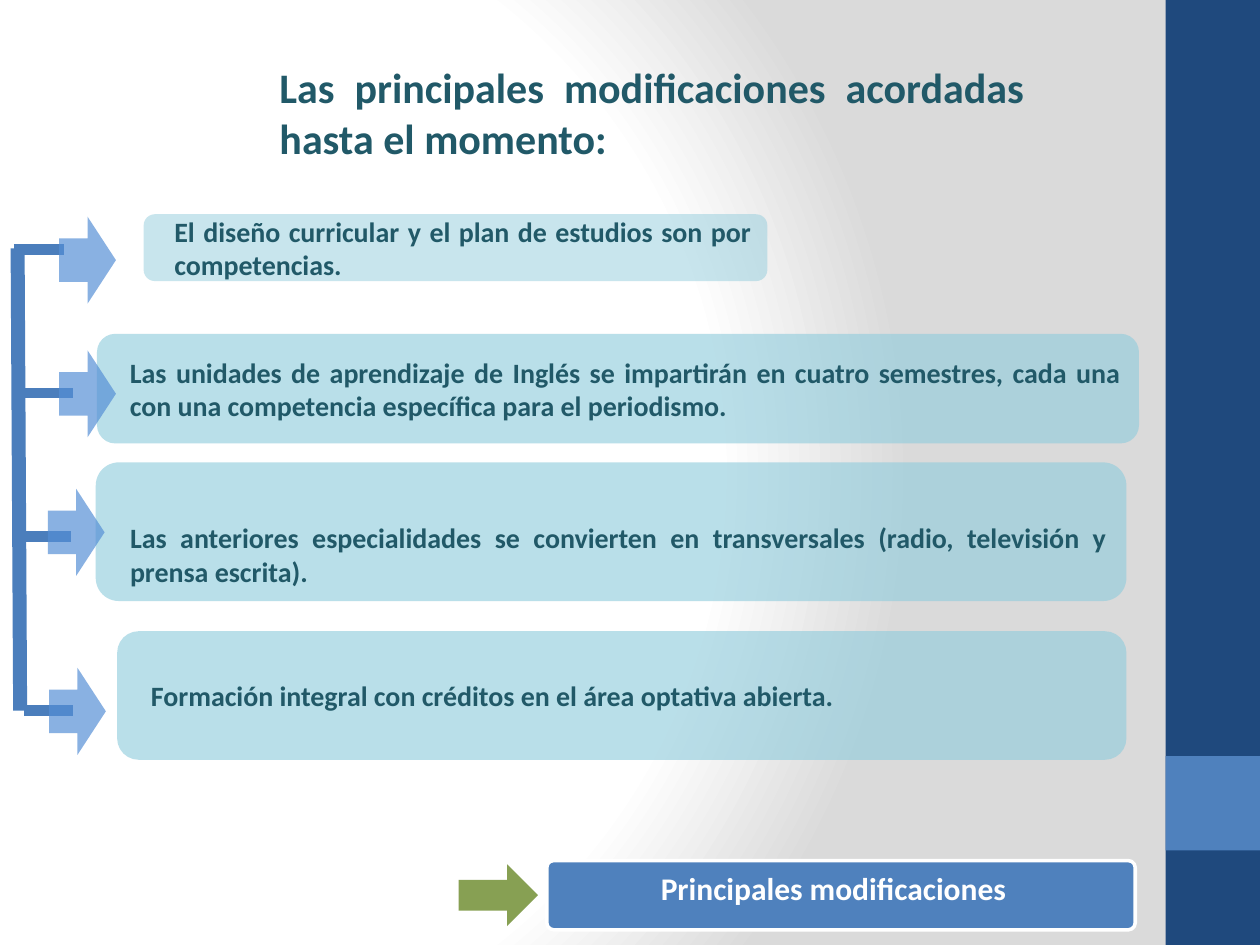
import pptx
import pptx.util
import pptx.dml.color
import pptx.enum.shapes
import pptx.enum.text
import pptx.oxml
import pptx.oxml.ns

SHAPE = pptx.enum.shapes.MSO_SHAPE
ANCHOR = pptx.enum.text.MSO_ANCHOR
ALIGN = pptx.enum.text.PP_ALIGN
color = pptx.dml.color.RGBColor.from_string
NS = pptx.oxml.ns.nsdecls("a")

prs = pptx.Presentation()
prs.slide_width = pptx.util.Inches(10)
prs.slide_height = pptx.util.Inches(7.5)
col = prs.slide_width / 100
row = prs.slide_height / 100
s = prs.slides.add_slide(prs.slide_layouts[6])


def add_block(kind, x, y, w, h, fill, alpha=100):
    sp = s.shapes.add_shape(kind, int(x * col), int(y * row), int(w * col), int(h * row))
    sp.shadow.inherit = False
    sp.line.fill.background()
    sp.fill.solid()
    sp.fill.fore_color.rgb = color(fill)
    if alpha < 100:
        clr = sp.fill._xPr.find(".//" + pptx.oxml.ns.qn("a:srgbClr"))
        clr.append(pptx.oxml.parse_xml(f'<a:alpha {NS} val="{alpha * 1000}"/>'))
    return sp


def write(sp, text, size, font_color, indent, align, anchor):
    tf = sp.text_frame
    tf.word_wrap = True
    tf.vertical_anchor = anchor
    tf.text = text
    p = tf.paragraphs[0]
    p.alignment = align
    pPr = p._p.get_or_add_pPr()
    pPr.set("marL", str(int(indent * col)))
    pPr.set("indent", "0")
    r = p.runs[0]
    r.font.name = "Calibri"
    r.font.size = pptx.util.Pt(size)
    r.font.bold = True
    r.font.color.rgb = color(font_color)


s.background.fill.solid()
bg = s.element.find(".//" + pptx.oxml.ns.qn("p:bgPr"))
solid = bg.find(pptx.oxml.ns.qn("a:solidFill"))
stops = "".join(
    f'<a:gs pos="{pos * 1000}"><a:srgbClr val="{c}"/></a:gs>'
    for pos, c in [(0, "FFFFFF"), (75, "FFFFFF"), (100, "DADADA")]
)
bg.replace(solid, pptx.oxml.parse_xml(
    f'<a:gradFill {NS} rotWithShape="1"><a:gsLst>{stops}</a:gsLst><a:path path="circle">'
    '<a:fillToRect l="20000" t="50000" r="100000" b="50000"/></a:path></a:gradFill>'
))

add_block(SHAPE.RECTANGLE, 92.5, 0, 7.5, 100, "1F497D")
add_block(SHAPE.RECTANGLE, 92.5, 80, 7.5, 10, "4F81BD")

footer = add_block(SHAPE.ROUNDED_RECTANGLE, 43.4, 91.07, 46.7, 7.33, "4F81BD")
footer.adjustments[0] = 0.1
footer.line.color.rgb = color("FFFFFF")
footer.line.width = pptx.util.Pt(2)
write(footer, "Principales modificaciones", 18, "FFFFFF", 7.9, ALIGN.LEFT, ANCHOR.TOP)
add_block(SHAPE.RIGHT_ARROW, 36.4, 91.47, 6.3, 6.53, "77933C", 88)

changes = [
    (11.4, 22.67, 49.5, 7.07, 50, ANCHOR.MIDDLE,
     "El diseño curricular y el plan de estudios son por competencias."),
    (7.6, 48.93, 81.8, 14.67, 64, ANCHOR.BOTTOM,
     "Las anteriores especialidades se convierten en transversales (radio, televisión y prensa escrita)."),
    (7.7, 35.33, 82.7, 11.6, 64, ANCHOR.MIDDLE,
     "Las unidades de aprendizaje de Inglés se impartirán en cuatro semestres, cada una con una "
     "competencia específica para el periodismo."),
    (9.3, 66.8, 80.1, 13.6, 64, ANCHOR.MIDDLE,
     "Formación integral con créditos en el área optativa abierta."),
]
for x, y, w, h, alpha, anchor, text in changes:
    sp = add_block(SHAPE.ROUNDED_RECTANGLE, x, y, w, h, "93CDDD", alpha)
    write(sp, text, 16, "215968", 1.2, ALIGN.JUSTIFY, anchor)

title = s.shapes.add_textbox(int(20 * col), int(5.87 * row), int(62.3 * col), int(12.13 * row))
write(title, "Las principales modificaciones acordadas hasta el momento:", 24, "215968", 1.2,
      ALIGN.JUSTIFY, ANCHOR.TOP)

branches = [
    (1.4, 26.27, 1.6, 75.2, 8),
    (1.1, 26.4, 5.1, 26.4, 6),
    (1.6, 56.8, 5.6, 56.8, 6),
    (1.9, 41.6, 5.8, 41.6, 6),
    (1.9, 75.2, 5.8, 75.2, 6),
]
for x1, y1, x2, y2, width in branches:
    line = s.shapes.add_connector(
        pptx.enum.shapes.MSO_CONNECTOR.STRAIGHT,
        int(x1 * col), int(y1 * row), int(x2 * col), int(y2 * row))
    line.line.color.rgb = color("4B7EBC")
    line.line.width = pptx.util.Pt(width)
    line._element.spPr.append(pptx.oxml.parse_xml(f"<a:effectLst {NS}/>"))

for x, y in [(4.7, 22.93), (4.7, 37.07), (3.8, 51.73), (3.9, 70.67)]:
    add_block(SHAPE.RIGHT_ARROW, x, y, 4.5, 9.2, "558ED5", 69)

prs.save("out.pptx")
